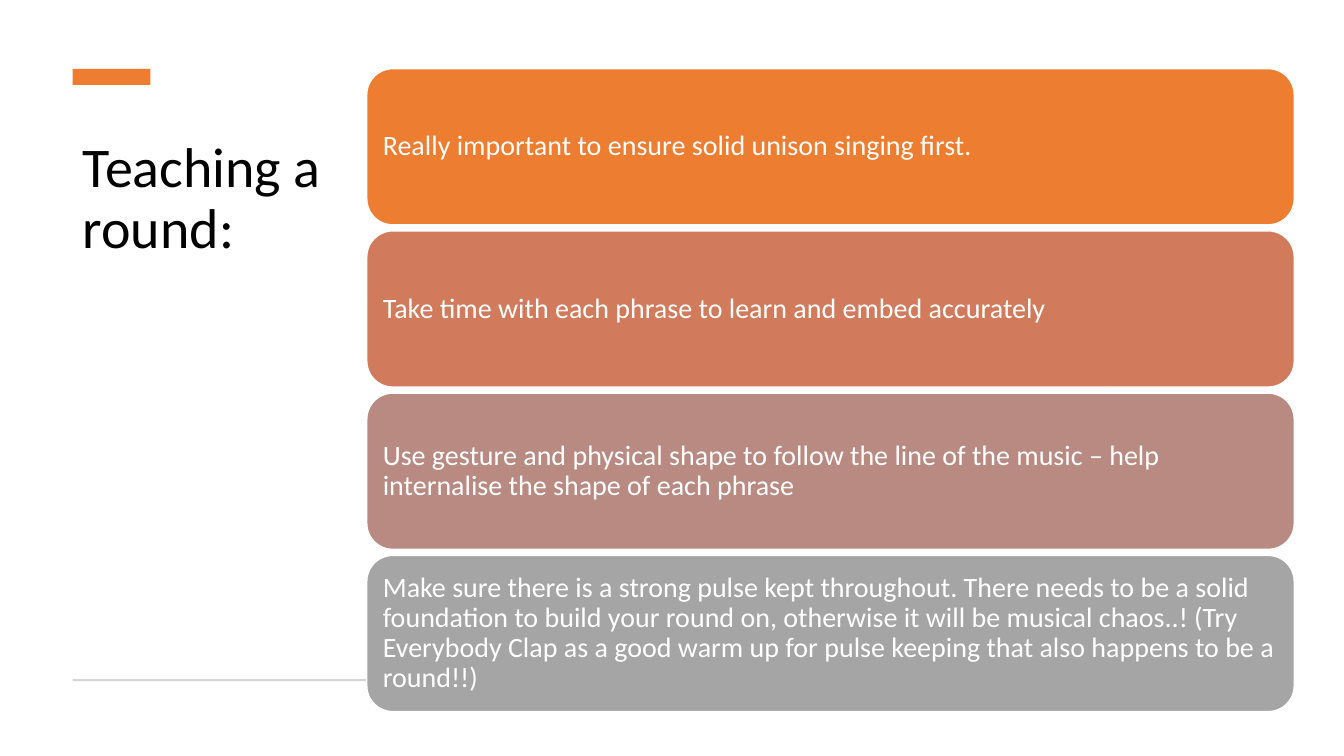
"""Build the slide with the steps for teaching a round."""
from pptx import Presentation
from pptx.dml.color import RGBColor
from pptx.enum.shapes import MSO_SHAPE as Shape
from pptx.enum.text import MSO_ANCHOR as Anchor, MSO_AUTO_SIZE as AutoSize, PP_ALIGN as Align
from pptx.util import Pt

FONT = "Calibri"
COLORS = {
    "accent": "ED7D31",
    "rule": "D5D5D5",
    "title": "000000",
    "white": "FFFFFF",
}
STEPS = [
    ("Really important to ensure solid unison singing first.", "ED7D31"),
    ("Take time with each phrase to learn and embed accurately", "D17B5C"),
    ("Use gesture and physical shape to follow the line of the music – help "
     "internalise the shape of each phrase", "B98A82"),
    ("Make sure there is a strong pulse kept throughout. There needs to be a solid "
     "foundation to build your round on, otherwise it will be musical chaos..! "
     "(Try Everybody Clap as a good warm up for pulse keeping that also happens "
     "to be a round!!)", "A5A5A5"),
]
STEP_LEFT, STEP_TOP = 262, 49
STEP_WIDTH, STEP_HEIGHT, STEP_PITCH = 662.5, 111.6, 115.9


def place(shape, left, top, width, height):
    """Move and size a shape, in points."""
    shape.left, shape.top = Pt(left), Pt(top)
    shape.width, shape.height = Pt(width), Pt(height)


def write_text(text_frame, text, size, color):
    """Set left-aligned text with the slide's font and tight lines."""
    text_frame.text = text
    text_frame.word_wrap = True
    text_frame.auto_size = AutoSize.NONE
    paragraph = text_frame.paragraphs[0]
    paragraph.alignment = Align.LEFT
    paragraph.line_spacing = 0.9
    font = paragraph.runs[0].font
    font.name, font.size = FONT, Pt(size)
    font.color.rgb = RGBColor.from_string(color)


def add_block(slide, kind, left, top, width, height, fill):
    """Add a flat filled shape without outline or shadow."""
    shape = slide.shapes.add_shape(kind, 0, 0, 0, 0)
    place(shape, left, top, width, height)
    shape.shadow.inherit = False
    shape.fill.solid()
    shape.fill.fore_color.rgb = RGBColor.from_string(fill)
    shape.line.fill.background()
    return shape


def add_title(slide, text):
    """Fill the title placeholder and move it to the left column."""
    title = slide.shapes.title
    place(title, 52, 83, 210, 165)
    write_text(title.text_frame, text, 40, COLORS["title"])
    title.text_frame.vertical_anchor = Anchor.TOP
    title.text_frame.margin_top = Pt(16.5)


def add_step(slide, index, text, fill):
    """Add one rounded step card at its place in the column."""
    top = STEP_TOP + index * STEP_PITCH
    card = add_block(slide, Shape.ROUNDED_RECTANGLE, STEP_LEFT, top,
                     STEP_WIDTH, STEP_HEIGHT, fill)
    card.line.color.rgb = RGBColor.from_string(COLORS["white"])
    card.line.width = Pt(1)
    frame = card.text_frame
    frame.margin_left = frame.margin_right = Pt(6)
    frame.margin_top = frame.margin_bottom = Pt(6)
    frame.vertical_anchor = Anchor.MIDDLE
    write_text(frame, text, 20, COLORS["white"])


def main():
    """Assemble and save the slide."""
    presentation = Presentation()
    presentation.slide_width, presentation.slide_height = Pt(960), Pt(540)
    slide = presentation.slides.add_slide(presentation.slide_layouts[5])
    add_title(slide, "Teaching a round:")
    add_block(slide, Shape.RECTANGLE, 52, 49.2, 55.5, 11.5, COLORS["accent"])
    add_block(slide, Shape.RECTANGLE, 52, 485, 266.5, 1.5, COLORS["rule"])
    for index, (text, fill) in enumerate(STEPS):
        add_step(slide, index, text, fill)
    presentation.save("out.pptx")


if __name__ == "__main__":
    main()
